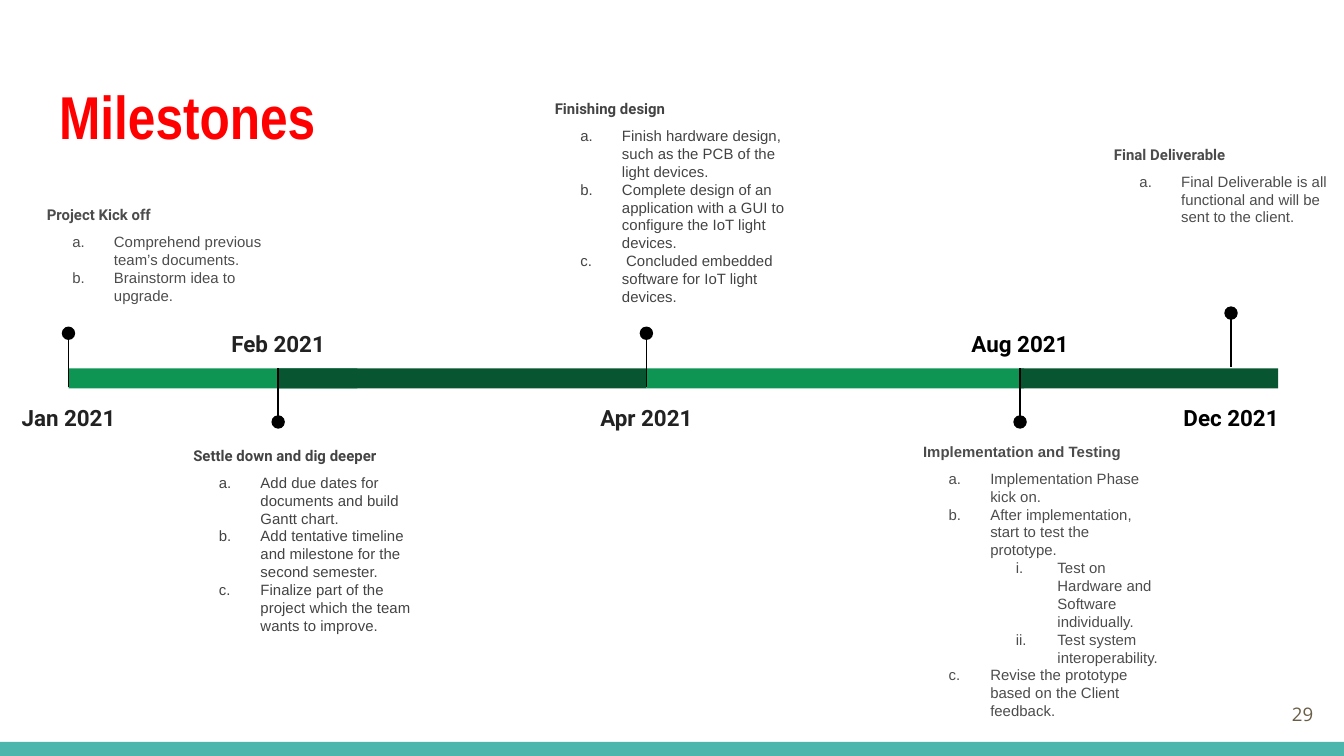
from dataclasses import dataclass
from lxml.etree import SubElement as Sub
from pptx import Presentation
from pptx.dml.color import RGBColor as Rgb
from pptx.enum.shapes import MSO_CONNECTOR as Line, MSO_SHAPE as Shape
from pptx.enum.text import MSO_ANCHOR as Anchor, MSO_AUTO_SIZE as Fit, PP_ALIGN as Align
from pptx.oxml.ns import qn
from pptx.util import Inches, Pt


@dataclass(frozen=True)
class Theme:
    red: str = "FF0000"
    teal: str = "4DB6AC"
    brown: str = "695D46"
    light: str = "0E9453"
    dark: str = "085631"
    black: str = "000000"
    ink: str = "222222"
    slate: str = "434343"
    gray: str = "4C4C4C"
    head: float = 32.4
    date: float = 12
    page: float = 10
    note: float = 8
    narrow: str = "Arial Narrow"
    sans: str = "Arial"
    bold: str = "Roboto"
    open: str = "Open Sans"


T = Theme()
BAR_TOP, BAR_TALL = 2.74, 0.15
DOT, PIN, LABEL_W = 0.1, 0.4, 1.15
NUMS = {1: "alphaLcPeriod", 2: "romanLcPeriod"}


@dataclass(frozen=True)
class Stone:
    date: str
    x: float
    wide: float
    fill: str
    up: bool
    ink: str
    note: tuple
    tint: str
    head: str
    items: tuple
    face: str = T.bold
    base: float = 2.88


STONES = (
    Stone("Jan 2021", 0.51, 2.15, T.light, True, T.ink, (-0.25, 1.43), T.gray,
          "Project Kick off", (
              (1, "Comprehend previous team’s documents."),
              (1, "Brainstorm idea to upgrade."))),
    Stone("Feb 2021", 2.07, 2.74, T.dark, False, T.ink, (0.84, 3.22), T.slate,
          "Settle down and dig deeper", (
              (1, "Add due dates for documents and build Gantt chart."),
              (1, "Add tentative timeline and milestone for the second semester."),
              (1, "Finalize part of the project which the team wants to improve."))),
    Stone("Apr 2021", 4.81, 2.81, T.light, True, T.ink, (3.53, 0.64), T.slate,
          "Finishing design", (
              (1, "Finish hardware design, such as the PCB of the light devices."),
              (1, "Complete design of an application with a GUI to configure the IoT light devices."),
              (1, " Concluded embedded software for IoT light devices."))),
    Stone("Aug 2021", 7.59, 1.92, T.dark, False, T.black, (6.27, 3.19), T.gray,
          "Implementation and Testing", (
              (1, "Implementation Phase kick on."),
              (1, "After implementation, start to test the prototype."),
              (2, "Test on Hardware and Software individually."),
              (2, "Test system interoperability."),
              (1, "Revise the prototype based on the Client feedback.")), face=T.sans),
    Stone("Dec 2021", 9.16, 0, T.dark, True, T.black, (7.69, 0.98), T.gray,
          "Final Deliverable", (
              (1, "Final Deliverable is all functional and will be sent to the client."),),
          base=2.73),
)


def style(para, size, face, tint, bold=False):
    for run in para.runs:
        font = run.font
        font.size, font.name, font.bold = Pt(size), face, bold
        font.color.rgb = Rgb.from_string(tint)


def pad(frame):
    frame.word_wrap = True
    frame.auto_size = Fit.NONE
    frame.margin_left = frame.margin_right = Inches(0.1)
    frame.margin_top = frame.margin_bottom = Inches(0.1)


def text_box(shapes, box):
    frame = shapes.add_textbox(*map(Inches, box)).text_frame
    pad(frame)
    return frame


def solid(shapes, kind, box, tint):
    shape = shapes.add_shape(kind, *map(Inches, box))
    shape.shadow.inherit = False
    shape.fill.solid()
    shape.fill.fore_color.rgb = Rgb.from_string(tint)
    shape.line.fill.background()


def title(slide, box):
    shape = slide.shapes.title
    shape.left, shape.top, shape.width, shape.height = map(Inches, box)
    frame = shape.text_frame
    frame.text = "Milestones"
    pad(frame)
    frame.vertical_anchor = Anchor.TOP
    para = frame.paragraphs[0]
    para.alignment = Align.LEFT
    style(para, T.head, T.narrow, T.red, True)


def page(shapes, box):
    frame = text_box(shapes, box)
    frame.text = "29"
    frame.vertical_anchor = Anchor.MIDDLE
    para = frame.paragraphs[0]
    para.alignment = Align.RIGHT
    style(para, T.page, T.open, T.brown)


def label(shapes, box, stone):
    frame = text_box(shapes, box)
    frame.text = stone.date
    para = frame.paragraphs[0]
    para.alignment = Align.CENTER
    para.line_spacing = 1.15
    para.space_after = Pt(16)
    style(para, T.date, T.bold, stone.ink, True)


def pin(shapes, x, base, tip):
    line = shapes.add_connector(Line.STRAIGHT, *map(Inches, (x, tip, x, base)))
    line.line.width = Pt(0.75)
    line.line.color.rgb = Rgb.from_string(T.black)
    Sub(line._element.spPr, qn("a:effectLst"))
    solid(shapes, Shape.OVAL, (x - DOT / 2, tip - DOT / 2, DOT, DOT), T.black)


def indent(para, left, first):
    props = para._p.get_or_add_pPr()
    props.set("marL", str(Inches(left)))
    props.set("indent", str(Inches(first)))
    return props


def note(shapes, box, stone):
    frame = text_box(shapes, box)
    frame.text = stone.head
    para = frame.paragraphs[0]
    indent(para, 0, 0.5)
    style(para, T.note, stone.face, stone.tint, True)
    for i, (level, words) in enumerate(stone.items):
        para = frame.add_paragraph()
        para.text = words
        para.level = level
        para.space_before = Pt(0 if i else 5)
        props = indent(para, 0.5 + level / 2, -0.31)
        Sub(props, qn("a:buAutoNum")).set("type", NUMS[level])
        style(para, T.note, T.sans, stone.tint)


def milestone(slide, stone):
    shapes = slide.shapes.add_group_shape().shapes
    if stone.wide:
        solid(shapes, Shape.RECTANGLE, (stone.x, BAR_TOP, stone.wide, BAR_TALL), stone.fill)
    if stone.up:
        pin(shapes, stone.x, stone.base, stone.base - PIN)
    else:
        pin(shapes, stone.x, BAR_TOP, BAR_TOP + PIN)
    top = 2.88 if stone.up else 2.33
    label(shapes, (stone.x - LABEL_W / 2, top, LABEL_W, 0.41), stone)
    note(shapes, (*stone.note, 2.46, 1.03), stone)


def main():
    deck = Presentation()
    deck.slide_width = Inches(10)
    deck.slide_height = deck.slide_width * 9 // 16
    slide = deck.slides.add_slide(deck.slide_layouts[5])
    solid(slide.shapes, Shape.RECTANGLE, (0, 5.52, 10, 0.11), T.teal)
    title(slide, (0.34, 0.49, 9.32, 0.77))
    page(slide.shapes, (9.27, 5.1, 0.6, 0.43))
    for stone in STONES:
        milestone(slide, stone)
    deck.save("out.pptx")


if __name__ == "__main__":
    main()
